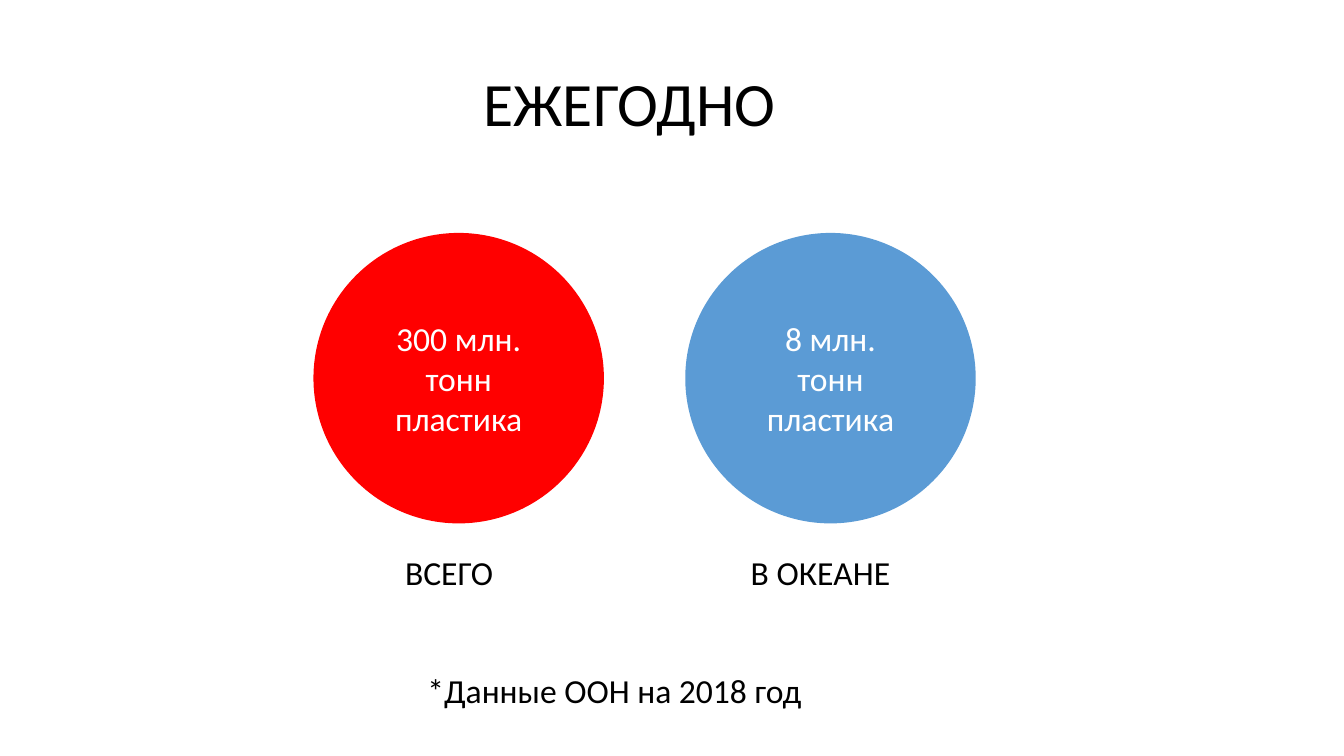
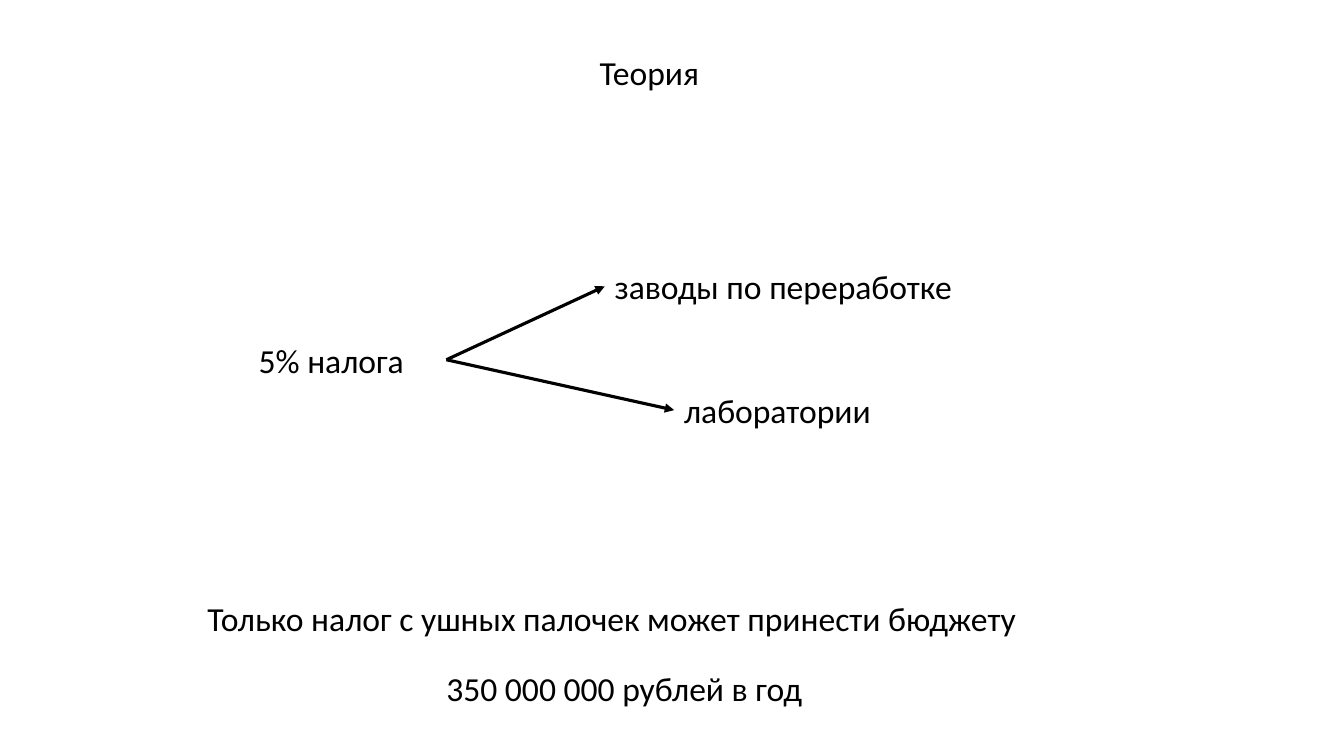
from lxml.etree import SubElement
from pptx import Presentation
from pptx.dml.color import RGBColor
from pptx.enum.shapes import MSO_CONNECTOR, MSO_SHAPE
from pptx.enum.text import MSO_ANCHOR, PP_ALIGN
from pptx.oxml.ns import qn
from pptx.util import Cm, Pt

COLOURS = {
    "text": "000000",
    "inverse": "FFFFFF",
    "total": "FF0000",
    "ocean": "5B9BD5",
}
FONT = "Calibri"
BODY_SIZE = 24
TITLE_SIZE = 44
LINE_HEIGHT = 1.27
LEFT_SITE, RIGHT_SITE = 1, 3


def colour(name):
    return RGBColor.from_string(COLOURS[name])


def add_span(para, text, size, colour_name):
    span = para.add_run()
    span.text = text
    span.font.name = FONT
    span.font.size = Pt(size)
    span.font.color.rgb = colour(colour_name)


def fill_text(box, lines, size=BODY_SIZE, colour_name="text", align=PP_ALIGN.LEFT):
    """Write each line as a paragraph and return the paragraphs."""
    frame = box.text_frame
    frame.word_wrap = True
    for index, line in enumerate(lines):
        para = frame.add_paragraph() if index else frame.paragraphs[0]
        para.alignment = align
        add_span(para, line, size, colour_name)
    return frame.paragraphs


def add_label(page, left, top, width, text, size=BODY_SIZE, height=LINE_HEIGHT):
    box = page.shapes.add_textbox(Cm(left), Cm(top), Cm(width), Cm(height))
    fill_text(box, [text], size)
    return box


def add_plastic_circle(page, left, top, diameter, fill, lines):
    circle = page.shapes.add_shape(
        MSO_SHAPE.OVAL, Cm(left), Cm(top), Cm(diameter), Cm(diameter))
    circle.shadow.inherit = False
    circle.fill.solid()
    circle.fill.fore_color.rgb = colour(fill)
    circle.line.fill.background()
    circle.text_frame.vertical_anchor = MSO_ANCHOR.MIDDLE
    fill_text(circle, lines, colour_name="inverse", align=PP_ALIGN.CENTER)


def add_circle_row(page, left, top, diameter=7.32, pitch=9.37):
    """Place the circles at an equal pitch, each with its caption below."""
    circles = [
        ("total", ["300 млн. тонн пластика"], "ВСЕГО", 2.06, 3.18),
        ("ocean", ["8 млн.", "тонн пластика"], "В ОКЕАНЕ", 1.4, 4.5),
    ]
    for index, (fill, lines, caption, inset, width) in enumerate(circles):
        x = left + index * pitch
        add_plastic_circle(page, x, top, diameter, fill, lines)
        add_label(page, x + inset, top + diameter + 0.6, width, caption)


def add_arrow(page, source, target):
    """Join the right side of source to the left side of target."""
    arrow = page.shapes.add_connector(MSO_CONNECTOR.STRAIGHT, 0, 0, 0, 0)
    arrow.begin_connect(source, RIGHT_SITE)
    arrow.end_connect(target, LEFT_SITE)
    arrow.line.color.rgb = colour("text")
    arrow.line.width = Pt(2.25)
    SubElement(arrow.line._get_or_add_ln(), qn("a:tailEnd"), type="triangle")
    SubElement(arrow._element.spPr, qn("a:effectLst"))


def add_tax_flow(page, left, top):
    tax = add_label(page, left, top, 4.98, "5% налога")
    uses = [
        ("заводы по переработке", 8.97, -1.85, 10.59),
        ("лаборатории", 10.72, 1.27, 6.3),
    ]
    for text, across, down, width in uses:
        target = add_label(page, left + across, top + down, width, text)
        add_arrow(page, tax, target)


def add_budget_note(page, left, top, width, height):
    box = page.shapes.add_textbox(Cm(left), Cm(top), Cm(width), Cm(height))
    amount = fill_text(box, [
        "Только налог с ушных палочек может принести бюджету",
        "350 000 000 рублей в год",
    ])[1]
    amount.space_before = Pt(21)
    amount._p.get_or_add_pPr().set("marL", str(Cm(6.02)))


def build_yearly_slide(page):
    add_label(page, 11.94, 1.5, 8.97, "ЕЖЕГОДНО", TITLE_SIZE, 2.13)
    add_circle_row(page, 7.9, 5.87)
    add_label(page, 10.52, 16.76, 11.05, "*Данные ООН на 2018 год")


def build_theory_slide(page):
    add_label(page, 14.86, 1.19, 3.45, "Теория")
    add_tax_flow(page, 6.27, 8.43)
    add_budget_note(page, 4.98, 14.94, 23.98, 3.07)


def main():
    deck = Presentation()
    deck.slide_width, deck.slide_height = Cm(33.87), Cm(19.05)
    blank = deck.slide_layouts[6]
    for build in (build_yearly_slide, build_theory_slide):
        build(deck.slides.add_slide(blank))
    deck.save("out.pptx")


if __name__ == "__main__":
    main()
